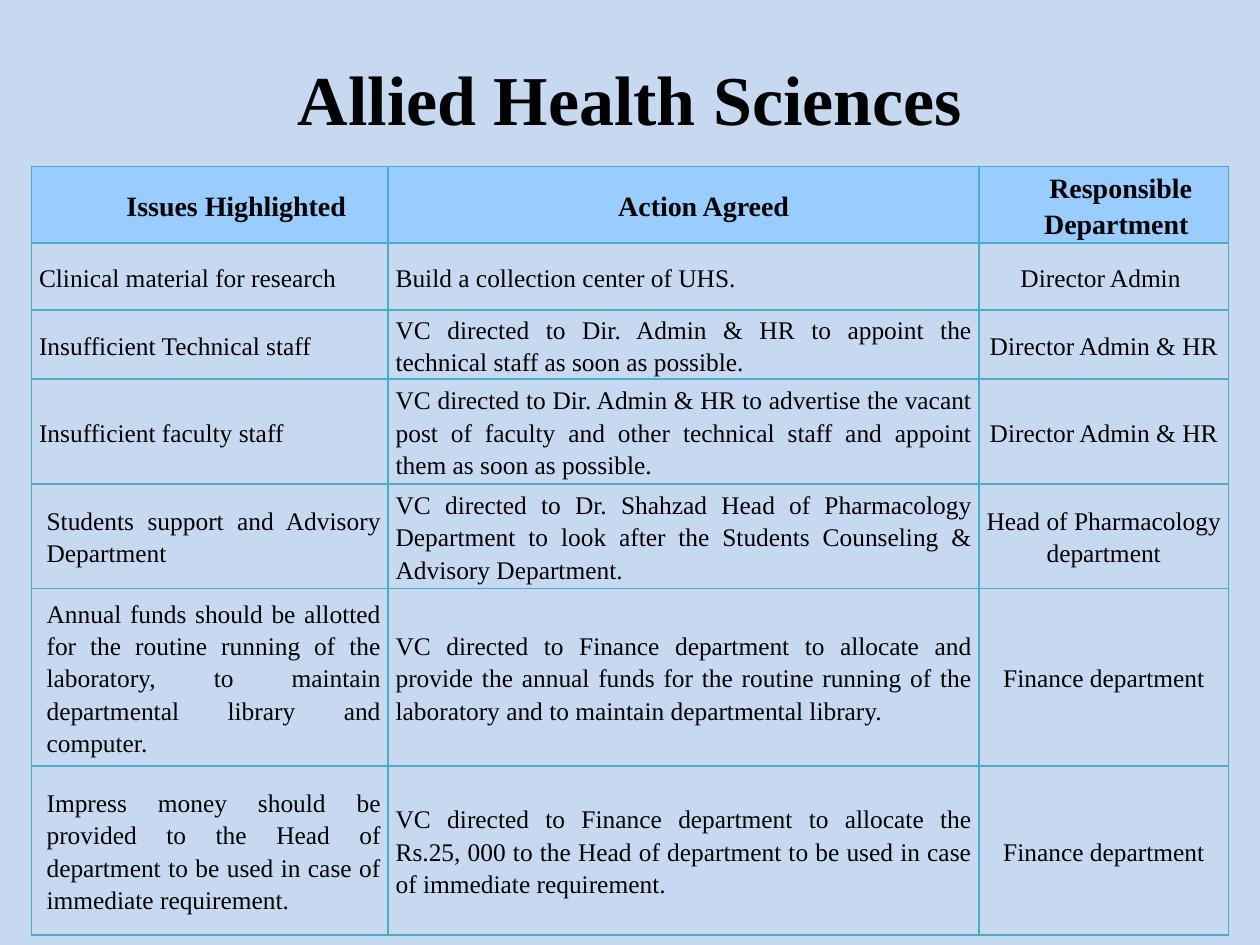
from dataclasses import dataclass

from lxml.etree import SubElement
from pptx import Presentation
from pptx.dml.color import RGBColor
from pptx.enum.text import MSO_ANCHOR, PP_ALIGN
from pptx.oxml.ns import qn
from pptx.util import Pt

PX = 9144  # EMU per px, 100 px to the inch
FONT = "Times New Roman"
BACK = RGBColor(0xC6, 0xD9, 0xF1)
HEAD = RGBColor(0x99, 0xCC, 0xFF)
EDGE = RGBColor(0x4B, 0xAC, 0xC6)
INK = RGBColor(0, 0, 0)
MID, JUST = PP_ALIGN.CENTER, PP_ALIGN.JUSTIFY
COLS = [283, 469, 198]
TALL = [61, 53, 55, 83, 83, 141, 134]


@dataclass
class Line:
    text: str
    align: PP_ALIGN = JUST
    dent: int = 0
    gap: float = 0


@dataclass
class Issue:
    name: str
    act: str
    dept: str
    dent: int = 0
    gap: float = 0

    def cells(self) -> list[list[Line]]:
        return [[Line(self.name, JUST, self.dent, self.gap)],
                [Line(self.act)], [Line(self.dept, MID)]]


TOP = [
    [Line("Issues Highlighted", MID, 42)],
    [Line("Action Agreed", MID, 32)],
    [Line("Responsible", MID, 27, 4.2), Line("Department", MID, 20)],
]
ISSUES = [
    Issue("Clinical material for research",
          "Build a collection center of UHS.", "Director Admin ", gap=0.3),
    Issue("Insufficient Technical staff",
          "VC directed to Dir. Admin & HR to appoint the technical staff as "
          "soon as possible.", "Director Admin & HR"),
    Issue("Insufficient faculty staff",
          "VC directed to Dir. Admin & HR to advertise the vacant post of "
          "faculty and other technical staff and appoint them as soon as "
          "possible.", "Director Admin & HR"),
    Issue("Students support and Advisory Department",
          "VC directed to Dr. Shahzad Head of Pharmacology Department to look "
          "after the Students Counseling & Advisory Department.",
          "Head of Pharmacology department", 6, 0.8),
    Issue("Annual funds should be allotted for the routine running of the "
          "laboratory, to maintain departmental library and computer.",
          "VC directed to Finance department to allocate and provide the "
          "annual funds for the routine running of the laboratory and to "
          "maintain departmental library.", "Finance department", 6, 0.5),
    Issue("Impress money should be provided to the Head of department to be "
          "used in case of immediate requirement.",
          "VC directed to Finance department to allocate the Rs.25, 000 to "
          "the Head of department to be used in case of immediate "
          "requirement.", "Finance department", 6, 0.5),
]


def px(*vals: int) -> list[int]:
    return [val * PX for val in vals]


def style(obj, fmt: dict) -> None:
    for key, val in fmt.items():
        setattr(obj, key, val)


def write(para, line: Line, size: float, bold: bool) -> None:
    run = para.add_run()
    run.text = line.text
    style(para, {"alignment": line.align, "space_before": Pt(line.gap)})
    style(run.font, {"name": FONT, "size": Pt(size), "bold": bold})
    run.font.color.rgb = INK
    if line.dent:
        props = para._p.get_or_add_pPr()
        props.set("marL", str(line.dent * PX))
        props.set("indent", "0")


def frame(cell) -> None:
    props = cell._tc.get_or_add_tcPr()
    for side in ("lnL", "lnR", "lnT", "lnB"):
        edge = SubElement(props, qn(f"a:{side}"), w=str(Pt(1)))
        fill = SubElement(edge, qn("a:solidFill"))
        SubElement(fill, qn("a:srgbClr"), val=str(EDGE))


def fill_cell(cell, lines: list[Line], head: bool) -> None:
    style(cell, {"margin_left": 6 * PX, "margin_right": 6 * PX,
                 "margin_top": 0, "margin_bottom": 0,
                 "vertical_anchor": MSO_ANCHOR.MIDDLE})
    frame(cell)
    if head:
        cell.fill.solid()
        cell.fill.fore_color.rgb = HEAD
    else:
        cell.fill.background()
    text = cell.text_frame
    for i, line in enumerate(lines):
        para = text.add_paragraph() if i else text.paragraphs[0]
        para.line_spacing = 1.15
        write(para, line, 16 if head else 14.5, head)


def add_grid(slide) -> None:
    rows = [TOP] + [issue.cells() for issue in ISSUES]
    area = px(25, 132, sum(COLS), sum(TALL))
    grid = slide.shapes.add_table(len(rows), len(COLS), *area).table
    style(grid, {"first_row": False, "horz_banding": False})
    for col, wide in zip(grid.columns, COLS):
        col.width = wide * PX
    for r, (row, tall) in enumerate(zip(rows, TALL)):
        grid.rows[r].height = tall * PX
        for c, lines in enumerate(row):
            fill_cell(grid.cell(r, c), lines, r == 0)


def add_title(slide) -> None:
    text = slide.shapes.add_textbox(*px(50, 30, 900, 95)).text_frame
    style(text, {"word_wrap": True, "vertical_anchor": MSO_ANCHOR.MIDDLE})
    write(text.paragraphs[0], Line("Allied Health Sciences", MID), 40, True)


def main() -> None:
    deck = Presentation()
    deck.slide_width, deck.slide_height = px(1000, 750)
    slide = deck.slides.add_slide(deck.slide_layouts[6])
    # Background
    back = slide.background.fill
    back.solid()
    back.fore_color.rgb = BACK
    # Table and title
    add_grid(slide)
    add_title(slide)
    deck.save("out.pptx")


if __name__ == "__main__":
    main()
